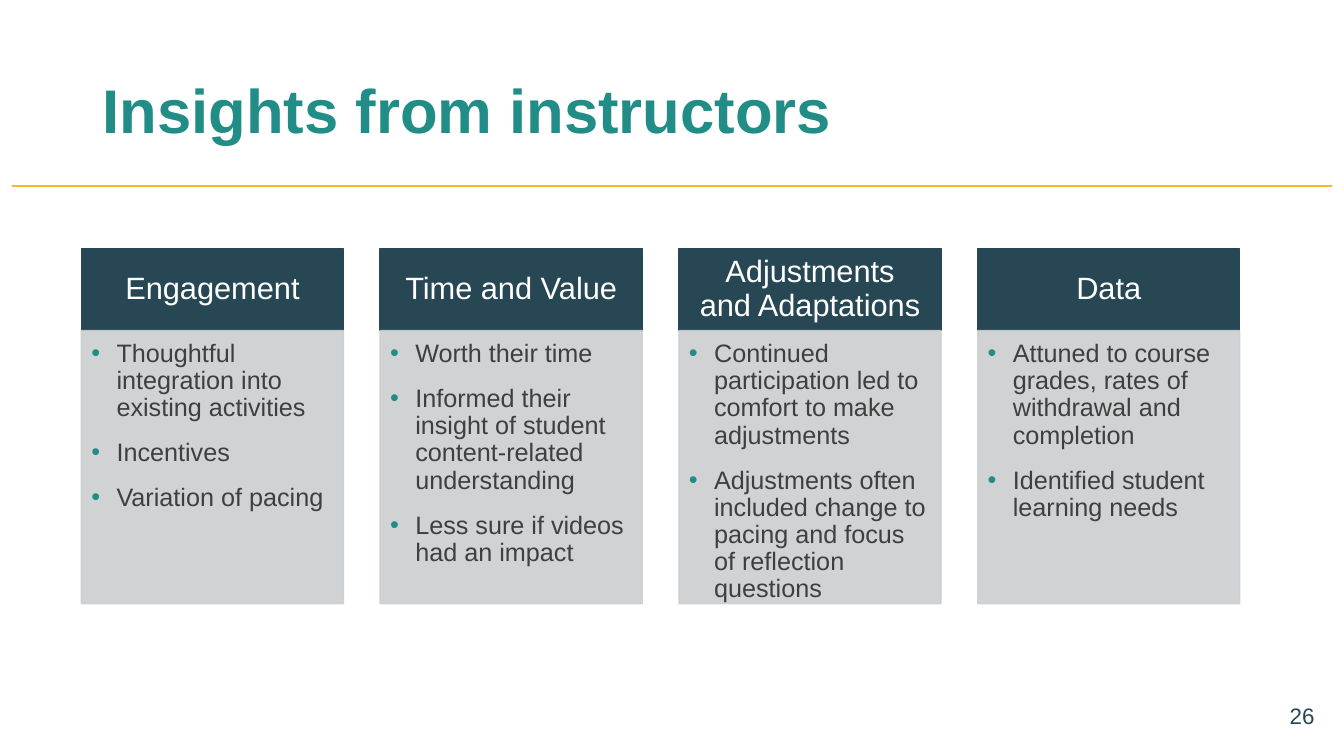
"""Build the "Insights from instructors" slide."""
from dataclasses import dataclass

from lxml.etree import SubElement
from pptx import Presentation
from pptx.dml.color import RGBColor
from pptx.enum.shapes import MSO_CONNECTOR as Connector, MSO_SHAPE as Shape
from pptx.enum.text import MSO_ANCHOR as Anchor, PP_ALIGN as Align
from pptx.oxml.ns import qn
from pptx.util import Pt

NAVY, TEAL, GOLD = "264753", "218D86", "F8B62F"
GREY, CHARCOAL, WHITE = "CBCECF", "3F3F3F", "FFFFFF"
FIRST_LEFT, COLUMN_PITCH, COLUMN_WIDTH = 58.2, 213.4, 187.2
HEADING_TOP, HEADING_HEIGHT, POINTS_HEIGHT = 177.6, 58.5, 195.1


@dataclass(frozen=True)
class Insight:
    heading: str
    points: tuple[str, ...]


INSIGHTS = (
    Insight("Engagement", (
        "Thoughtful integration into existing activities",
        "Incentives",
        "Variation of pacing",
    )),
    Insight("Time and Value", (
        "Worth their time",
        "Informed their insight of student content-related understanding",
        "Less sure if videos had an impact",
    )),
    Insight("Adjustments and Adaptations", (
        "Continued participation led to comfort to make adjustments",
        "Adjustments often included change to pacing and focus of reflection questions",
    )),
    Insight("Data", (
        "Attuned to course grades, rates of withdrawal and completion",
        "Identified student learning needs",
    )),
)


def paint(color_format, color: str) -> None:
    """Apply a hex colour to a colour format."""
    color_format.rgb = RGBColor.from_string(color)


def set_frame(frame, anchor, left: float, top: float, right: float, bottom: float) -> None:
    """Wrap a text frame and set its anchor and insets."""
    frame.word_wrap = True
    frame.vertical_anchor = anchor
    frame.margin_left, frame.margin_top = Pt(left), Pt(top)
    frame.margin_right, frame.margin_bottom = Pt(right), Pt(bottom)


def format_paragraph(paragraph, size: float, color: str, align, spacing: float = 0.9,
                     bold: bool = False) -> None:
    """Set the alignment, line spacing and run fonts of a paragraph."""
    paragraph.alignment = align
    paragraph.line_spacing = spacing
    for run in paragraph.runs:
        run.font.name, run.font.size, run.font.bold = "Arial", Pt(size), bold
        paint(run.font.color, color)


def add_bullet(paragraph, color: str) -> None:
    """Give a paragraph a coloured bullet with a hanging indent."""
    properties = paragraph._p.get_or_add_pPr()
    properties.set("marL", str(Pt(18)))
    properties.set("indent", str(-Pt(18)))
    bullet_color = SubElement(properties, qn("a:buClr"))
    SubElement(bullet_color, qn("a:srgbClr"), val=color)
    SubElement(properties, qn("a:buFont"), typeface="Arial")
    SubElement(properties, qn("a:buChar"), char="•")


def add_panel(slide, left: float, top: float, height: float, color: str):
    """Add a column-wide rectangle with matching fill and line."""
    panel = slide.shapes.add_shape(
        Shape.RECTANGLE, Pt(left), Pt(top), Pt(COLUMN_WIDTH), Pt(height))
    panel.shadow.inherit = False
    panel.fill.solid()
    paint(panel.fill.fore_color, color)
    paint(panel.line.color, color)
    panel.line.width = Pt(1)
    return panel


def add_insight(slide, insight: Insight, left: float) -> None:
    """Draw one column: a heading above its bulleted points."""
    heading = add_panel(slide, left, HEADING_TOP, HEADING_HEIGHT, NAVY)
    set_frame(heading.text_frame, Anchor.MIDDLE, 12.3, 7.2, 12.3, 7.2)
    heading.text_frame.text = insight.heading
    format_paragraph(heading.text_frame.paragraphs[0], 22, WHITE, Align.CENTER)

    points = add_panel(slide, left, HEADING_TOP + HEADING_HEIGHT, POINTS_HEIGHT, GREY)
    for tint in points._element.spPr.iter(qn("a:srgbClr")):
        SubElement(tint, qn("a:alpha"), val="90000")
    set_frame(points.text_frame, Anchor.TOP, 7.2, 7.2, 10.1, 11.5)
    points.text_frame.text = "\n".join(insight.points)
    for index, point in enumerate(points.text_frame.paragraphs):
        add_bullet(point, TEAL)
        format_paragraph(point, 18, CHARCOAL, Align.LEFT)
        if index:
            point.space_before = Pt(12.7)


def main() -> None:
    """Create the slide and save it."""
    deck = Presentation()
    deck.slide_width, deck.slide_height = Pt(960), Pt(540)
    slide = deck.slides.add_slide(deck.slide_layouts[5])

    rule = slide.shapes.add_connector(
        Connector.STRAIGHT, Pt(8.6), Pt(133.2), Pt(951.8), Pt(133.2))
    paint(rule.line.color, GOLD)
    rule.line.width = Pt(1.5)
    SubElement(rule._element.spPr, qn("a:effectLst"))

    title = slide.shapes.title
    title.left, title.top, title.width, title.height = Pt(66.2), Pt(28.8), Pt(761), Pt(104.4)
    set_frame(title.text_frame, Anchor.MIDDLE, 7.2, 3.6, 7.2, 3.6)
    title.text_frame.text = "Insights from instructors"
    format_paragraph(title.text_frame.paragraphs[0], 44, TEAL, Align.LEFT, bold=True)

    for index, insight in enumerate(INSIGHTS):
        add_insight(slide, insight, FIRST_LEFT + index * COLUMN_PITCH)

    page_number = slide.shapes.add_textbox(Pt(730), Pt(496.8), Pt(216), Pt(28.8))
    set_frame(page_number.text_frame, Anchor.MIDDLE, 7.2, 3.6, 7.2, 3.6)
    page_number.text_frame.text = "26"
    format_paragraph(page_number.text_frame.paragraphs[0], 16, "284753", Align.RIGHT, 1.0)

    deck.save("out.pptx")


if __name__ == "__main__":
    main()
